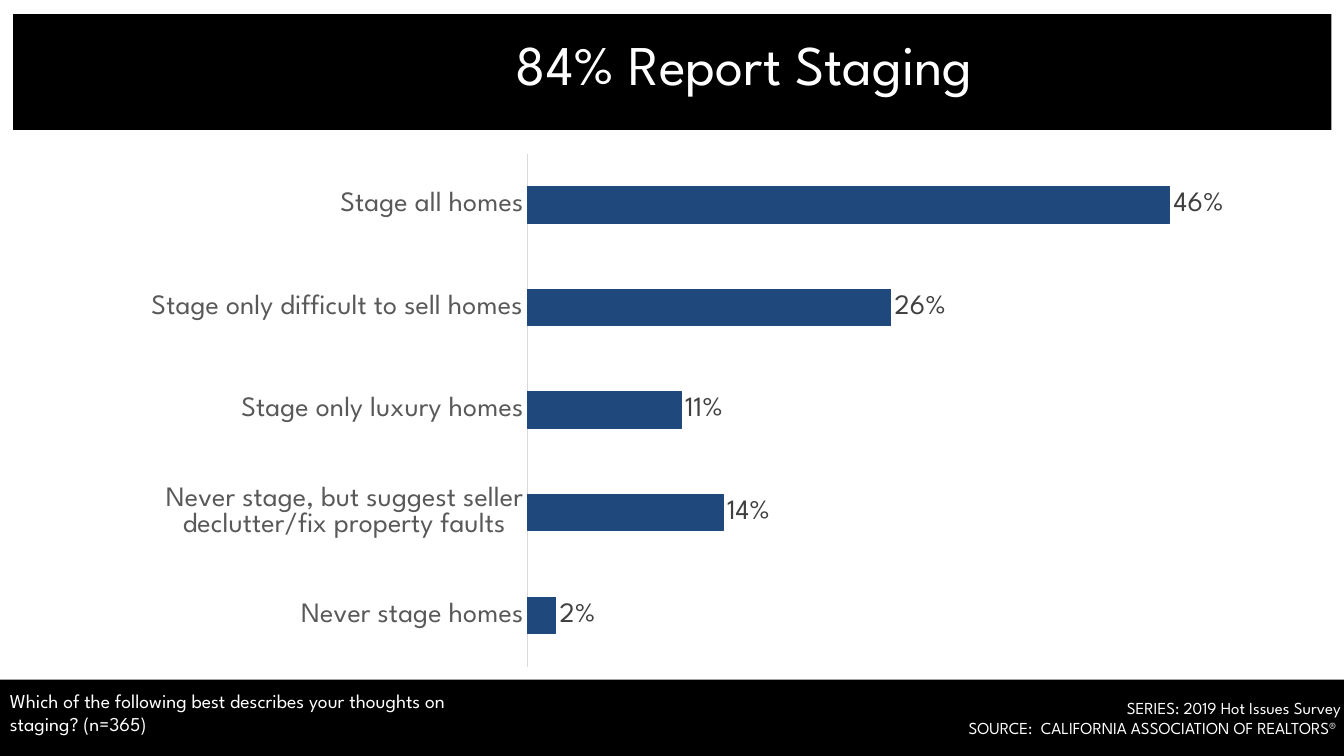
import pptx
import pptx.chart.data
import pptx.dml.color
import pptx.enum.chart
import pptx.enum.shapes
import pptx.enum.text
import pptx.util

Pt = pptx.util.Pt
RGBColor = pptx.dml.color.RGBColor
Align = pptx.enum.text.PP_ALIGN
Anchor = pptx.enum.text.MSO_ANCHOR

BLACK = RGBColor(0x00, 0x00, 0x00)
WHITE = RGBColor(0xFF, 0xFF, 0xFF)
BAR_BLUE = RGBColor(0x1F, 0x49, 0x7D)
CATEGORY_GRAY = RGBColor(0x59, 0x59, 0x59)
VALUE_GRAY = RGBColor(0x40, 0x40, 0x40)
AXIS_GRAY = RGBColor(0xD9, 0xD9, 0xD9)

STAGING_SHARES = {
    "Stage all homes": 0.46,
    "Stage only difficult to sell homes": 0.26,
    "Stage only luxury homes": 0.11,
    "Never stage, but suggest seller declutter/fix property faults": 0.14,
    "Never stage homes": 0.02,
}


class SlideBuilder:
    font_name = "League Spartan"

    def __init__(self, slide):
        self.slide = slide

    def style_font(self, font, size, color):
        font.name = self.font_name
        font.size = Pt(size)
        font.color.rgb = color

    def band(self, left, top, width, height):
        shape = self.slide.shapes.add_shape(
            pptx.enum.shapes.MSO_SHAPE.RECTANGLE,
            Pt(left), Pt(top), Pt(width), Pt(height))
        shape.shadow.inherit = False
        shape.fill.solid()
        shape.fill.fore_color.rgb = BLACK
        shape.line.fill.background()

    def text(self, text, left, top, width, height, *, size, align=Align.LEFT,
             anchor=Anchor.TOP, wrap=True, line_spacing=1.0):
        """Add a white text box with one paragraph per line of text."""
        box = self.slide.shapes.add_textbox(
            Pt(left), Pt(top), Pt(width), Pt(height))
        frame = box.text_frame
        frame.word_wrap = wrap
        frame.vertical_anchor = anchor
        frame.text = text
        for paragraph in frame.paragraphs:
            paragraph.alignment = align
            paragraph.line_spacing = line_spacing
            self.style_font(paragraph.runs[0].font, size, WHITE)

    def bar_chart(self, shares, left, top, width, height):
        chart_data = pptx.chart.data.CategoryChartData(number_format="0%")
        chart_data.categories = list(shares)
        chart_data.add_series("Series 1", list(shares.values()))
        chart = self.slide.shapes.add_chart(
            pptx.enum.chart.XL_CHART_TYPE.BAR_CLUSTERED,
            Pt(left), Pt(top), Pt(width), Pt(height), chart_data).chart
        chart.has_legend = False
        chart.has_title = False
        self.style_font(chart.font, 12, BLACK)

        category_axis = chart.category_axis
        category_axis.reverse_order = True
        category_axis.major_tick_mark = pptx.enum.chart.XL_TICK_MARK.NONE
        category_axis.format.line.color.rgb = AXIS_GRAY
        category_axis.format.line.width = Pt(0.75)
        self.style_font(category_axis.tick_labels.font, 20, CATEGORY_GRAY)

        value_axis = chart.value_axis
        value_axis.minimum_scale = 0
        value_axis.maximum_scale = 0.5
        value_axis.has_major_gridlines = False
        value_axis.visible = False

        plot = chart.plots[0]
        plot.gap_width = 182
        plot.vary_by_categories = False
        series = plot.series[0]
        series.format.fill.solid()
        series.format.fill.fore_color.rgb = BAR_BLUE
        series.format.line.color.rgb = BAR_BLUE
        series.format.line.width = Pt(0.75)

        labels = series.data_labels
        labels.show_value = True
        labels.position = pptx.enum.chart.XL_LABEL_POSITION.OUTSIDE_END
        labels.number_format = "0%"
        labels.number_format_is_linked = False
        self.style_font(labels.font, 20, VALUE_GRAY)


def main():
    presentation = pptx.Presentation()
    presentation.slide_width = Pt(960)
    presentation.slide_height = Pt(540)
    builder = SlideBuilder(
        presentation.slides.add_slide(presentation.slide_layouts[6]))

    builder.band(0, 485.5, 960, 54.5)
    builder.band(9.4, 10, 941.6, 82.8)
    builder.text("SERIES: 2019 Hot Issues Survey\n"
                 "SOURCE:  CALIFORNIA ASSOCIATION OF REALTORS® ",
                 645, 494.6, 320, 36, size=12, align=Align.RIGHT, wrap=False)
    builder.text("84% Report Staging", 122.4, 23.8, 818.6, 48.2, size=40,
                 align=Align.CENTER, anchor=Anchor.MIDDLE, line_spacing=0.9)
    builder.text("Which of the following best describes your thoughts on "
                 "staging? (n=365)", 0, 488.2, 344.2, 41, size=14)
    builder.bar_chart(STAGING_SHARES, 92.2, 102.2, 799.2, 381.6)

    presentation.save("out.pptx")


if __name__ == "__main__":
    main()
